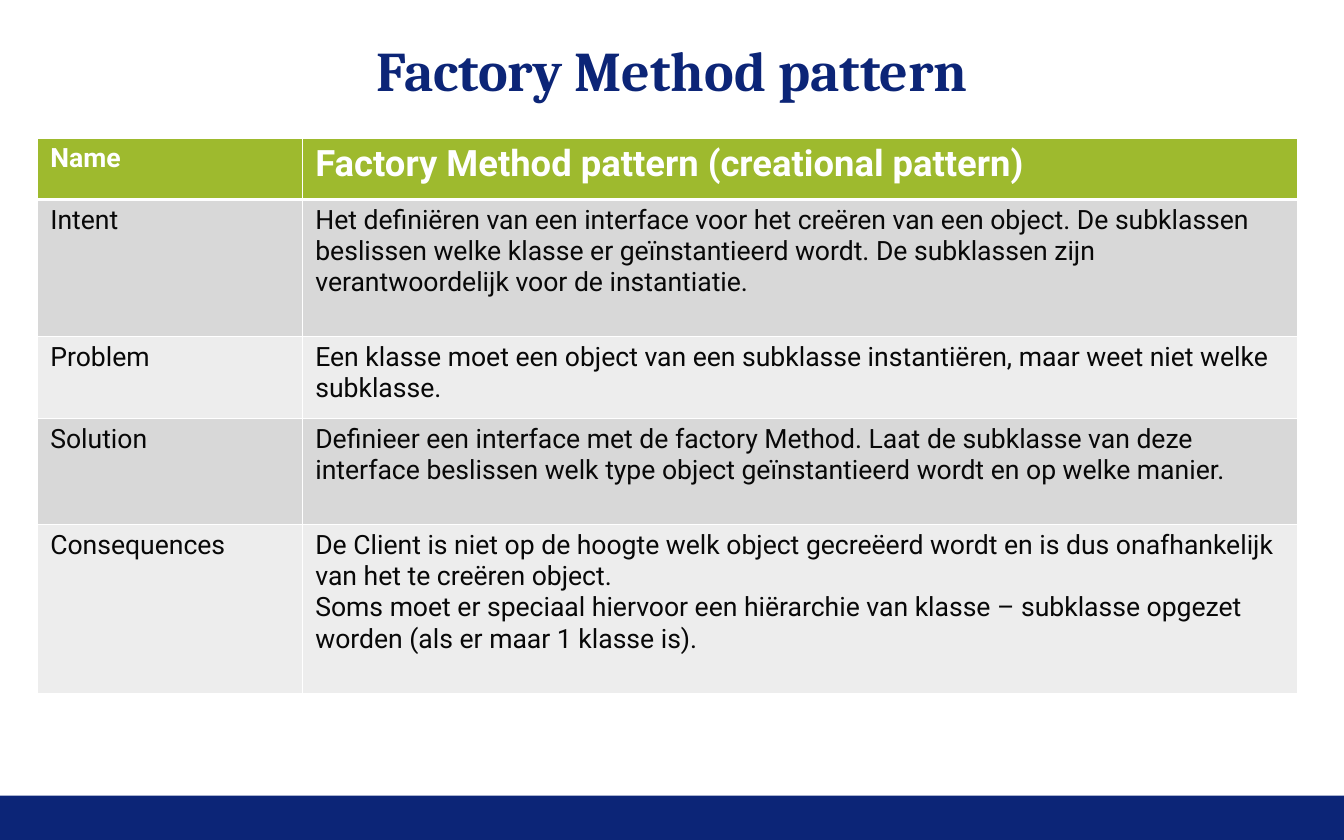
from pptx import Presentation
from pptx.dml.color import RGBColor
from pptx.enum.shapes import MSO_SHAPE
from pptx.enum.text import MSO_ANCHOR, PP_ALIGN
from pptx.oxml.ns import qn
from pptx.util import Cm, Pt
from lxml.etree import SubElement

# Content
TITLE = "Factory Method pattern"
ROWS = [
    ("Name", "Factory Method pattern (creational pattern)"),
    ("Intent", "Het definiëren van een interface voor het creëren van een object. "
     "De subklassen beslissen welke klasse er geïnstantieerd wordt. "
     "De subklassen zijn verantwoordelijk voor de instantiatie."),
    ("Problem", "Een klasse moet een object van een subklasse instantiëren, "
     "maar weet niet welke subklasse."),
    ("Solution", "Definieer een interface met de factory Method. "
     "Laat de subklasse van deze interface beslissen welk type object "
     "geïnstantieerd wordt en op welke manier."),
    ("Consequences", "De Client is niet op de hoogte welk object gecreëerd wordt "
     "en is dus onafhankelijk van het te creëren object.\n"
     "Soms moet er speciaal hiervoor een hiërarchie van klasse – subklasse "
     "opgezet worden (als er maar 1 klasse is)."),
]

# Format
COLORS = {"navy": "0C2577", "green": "9EBA2E", "dark": "D8D8D8",
          "light": "EDEDED", "white": "FFFFFF", "ink": "080808"}
WIDTH, HEIGHT = 33.88, 21.18
BAR = 1.12
COLS = [6.68, 25.1]
TALL = [1.55, 3.45, 2.08, 2.67, 4.27]
HEAD = {"name": "Roboto", "bold": True}
BODY = {"name": "Roboto", "bold": False, "size": Pt(19)}
TOP = {"name": "Cambria", "bold": True, "size": Pt(40)}
CELL = {"margin_left": Cm(0.33), "margin_right": Cm(0.33),
        "margin_top": Cm(0.13), "margin_bottom": Cm(0.13)}
FRAME = {"margin_left": 0, "margin_right": 0, "margin_top": 0,
         "margin_bottom": 0, "word_wrap": True,
         "vertical_anchor": MSO_ANCHOR.MIDDLE}


def color(name):
    return RGBColor.from_string(COLORS[name])


def apply(item, values):
    for key, value in values.items():
        setattr(item, key, value)


def style(frame, values, shade):
    for para in frame.paragraphs:
        apply(para.font, values)
        para.font.color.rgb = color(shade)


def paint(shape, shade):
    shape.fill.solid()
    shape.fill.fore_color.rgb = color(shade)


def edge(cell, widths):
    props = cell._tc.get_or_add_tcPr()
    for side, width in widths.items():
        line = SubElement(props, qn(f"a:ln{side}"), w=str(Pt(width)))
        fill = SubElement(line, qn("a:solidFill"))
        SubElement(fill, qn("a:srgbClr"), val=COLORS["white"])


deck = Presentation()
deck.slide_width, deck.slide_height = Cm(WIDTH), Cm(HEIGHT)
slide = deck.slides.add_slide(deck.slide_layouts[6])

# Footer bar
bar = slide.shapes.add_shape(MSO_SHAPE.RECTANGLE, 0, Cm(HEIGHT - BAR),
                             Cm(WIDTH), Cm(BAR))
bar.shadow.inherit = False
paint(bar, "navy")
bar.line.fill.background()

# Title
title = slide.shapes.add_textbox(Cm(1.12), Cm(1.12), Cm(31.65), Cm(1.24))
frame = title.text_frame
apply(frame, FRAME)
frame.text = TITLE
frame.paragraphs[0].alignment = PP_ALIGN.CENTER
style(frame, TOP, "navy")

# Pattern table
table = slide.shapes.add_table(len(ROWS), len(COLS), Cm(0.94), Cm(3.48),
                               Cm(sum(COLS)), Cm(sum(TALL))).table
for col, width in zip(table.columns, COLS):
    col.width = Cm(width)
for i, (texts, tall) in enumerate(zip(ROWS, TALL)):
    table.rows[i].height = Cm(tall)
    for j, text in enumerate(texts):
        cell = table.cell(i, j)
        cell.text = text
        apply(cell, CELL)
        edge(cell, {"L": 1, "R": 1, "T": 3 if i == 1 else 1,
                    "B": 3 if i == 0 else 1})
        if i == 0:
            paint(cell, "green")
            style(cell.text_frame, {**HEAD, "size": Pt((19, 26)[j])}, "white")
        else:
            paint(cell, "dark" if i % 2 else "light")
            style(cell.text_frame, BODY, "ink")

deck.save("out.pptx")
